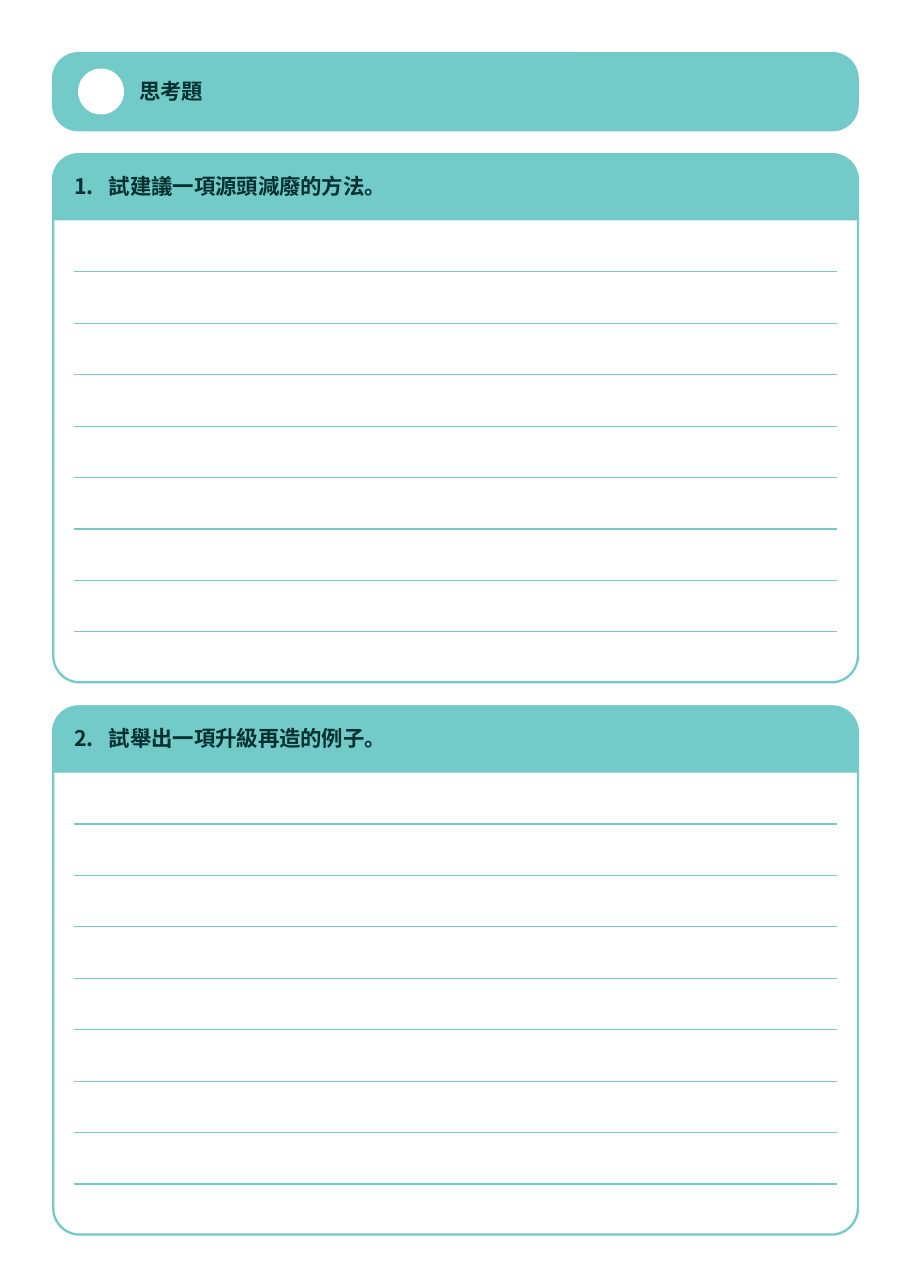
from lxml.etree import SubElement
from pptx import Presentation
from pptx.dml.color import RGBColor
from pptx.enum.shapes import MSO_CONNECTOR as Link, MSO_SHAPE as Kind
from pptx.enum.text import MSO_AUTO_SIZE as Fit
from pptx.oxml.ns import qn
from pptx.util import Cm, Pt

HUES = {"teal": "72CBC9", "ink": "002F2F", "white": "FFFFFF"}
FACE = "Noto Sans CJK SC"
FONT = {"name": FACE, "size": Pt(14), "bold": True}
FRAME = {"word_wrap": True, "auto_size": Fit.NONE, "margin_left": 0,
         "margin_top": Cm(0.03), "margin_right": 0, "margin_bottom": 0}
ROUND = 0.61  # corner radius in cm
ROWS = 9  # writing rows in each panel
ASKS = ["1.\t試建議一項源頭減廢的方法。", "2.\t試舉出一項升級再造的例子。"]


def hue(name):
    return RGBColor.from_string(HUES[name])


def apply(item, values):
    for key, value in values.items():
        setattr(item, key, value)


def add_shape(slide, kind, box, fill=None, line=None):
    shape = slide.shapes.add_shape(kind, *map(Cm, box))
    shape.shadow.inherit = False
    if fill:
        shape.fill.solid()
        shape.fill.fore_color.rgb = hue(fill)
    else:
        shape.fill.background()
    if line:
        shape.line.color.rgb = hue(line)
        shape.line.width = Pt(1.5)
    else:
        shape.line.fill.background()
    if kind != Kind.OVAL:
        shape.adjustments[0] = ROUND / min(box[2:])


def add_rule(slide, left, right, top):
    rule = slide.shapes.add_connector(
        Link.STRAIGHT, Cm(left), Cm(top), Cm(right), Cm(top))
    rule.line.color.rgb = hue("teal")
    rule.line.width = Pt(0.75)
    SubElement(rule._element.spPr, qn("a:effectLst"))


def add_text(slide, box, text, space):
    frame = slide.shapes.add_textbox(*map(Cm, box)).text_frame
    apply(frame, FRAME)
    para = frame.paragraphs[0]
    para.space_before = Pt(1)
    # Tab stop between number and question
    props = para._p.get_or_add_pPr()
    props.set("marL", str(Cm(0.03)))
    tabs = SubElement(props, qn("a:tabLst"))
    SubElement(tabs, qn("a:tab"), pos=str(Cm(0.8)), algn="l")
    run = para.add_run()
    run.text = text
    apply(run.font, FONT)
    run.font.color.rgb = hue("ink")
    marks = run._r.get_or_add_rPr()
    marks.set("spc", str(space))
    SubElement(marks, qn("a:ea"), typeface=FACE)


def add_panel(slide, top, text):
    # Frame and title band
    add_shape(slide, Kind.ROUNDED_RECTANGLE, (1.23, top + 0.03, 18.55, 12.17),
              line="teal")
    add_shape(slide, Kind.ROUND_2_SAME_RECTANGLE, (1.2, top, 18.6, 1.55),
              fill="teal")
    add_text(slide, (1.68, top + 0.43, 7.26, 0.64), text, -10)
    # Writing lines
    start = top + 1.55
    step = 10.67 / ROWS
    for row in range(1, ROWS):
        add_rule(slide, 1.7, 19.3, start + row * step)


def main():
    deck = Presentation()
    deck.slide_width, deck.slide_height = Cm(20.98), Cm(29.69)
    slide = deck.slides.add_slide(deck.slide_layouts[6])

    # Question panels
    for spot, text in enumerate(ASKS):
        add_panel(slide, 3.53 + spot * 12.73, text)

    # Page header
    add_shape(slide, Kind.ROUNDED_RECTANGLE, (1.2, 1.2, 18.6, 1.83),
              fill="teal")
    add_text(slide, (3.18, 1.78, 1.8, 0.64), "思考題", -20)
    add_shape(slide, Kind.OVAL, (1.8, 1.58, 1.06, 1.06), fill="white")

    deck.save("out.pptx")


if __name__ == "__main__":
    main()
